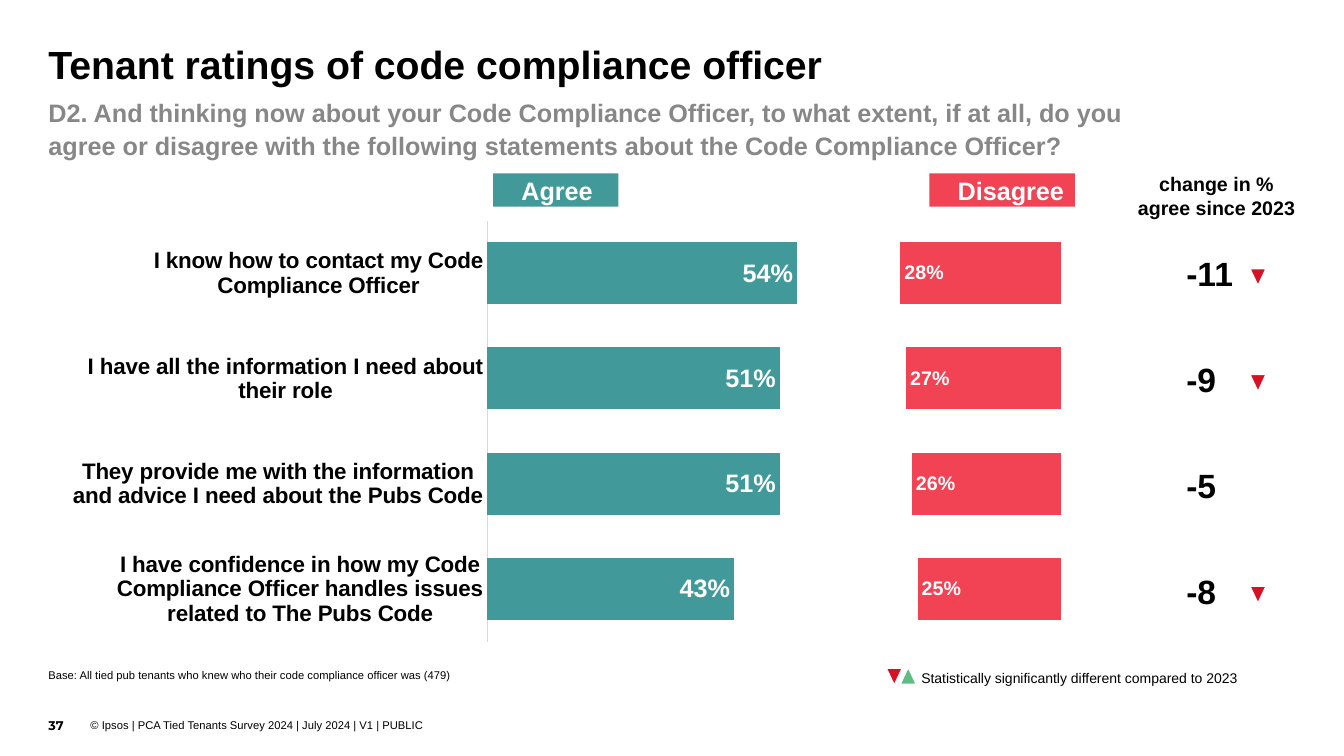
from dataclasses import dataclass

from lxml import etree
from pptx import Presentation
from pptx.chart.data import CategoryChartData
from pptx.dml.color import RGBColor as RGB
from pptx.enum.chart import XL_CHART_TYPE as CT, XL_LABEL_POSITION as LP
from pptx.enum.chart import XL_TICK_LABEL_POSITION as TLP, XL_TICK_MARK as TM
from pptx.enum.shapes import MSO_SHAPE as SHAPE
from pptx.enum.text import MSO_ANCHOR as ANCHOR, PP_ALIGN as ALIGN
from pptx.oxml.ns import qn
from pptx.util import Pt


@dataclass(frozen=True)
class Theme:
    """Colours, fonts and type sizes of the slide."""
    font: str = "Arial"
    number_font: str = "Montserrat"
    black: RGB = RGB(0, 0, 0)
    white: RGB = RGB(255, 255, 255)
    grey: RGB = RGB.from_string("878787")
    axis: RGB = RGB.from_string("D9D9D9")
    agree: RGB = RGB.from_string("419999")
    disagree: RGB = RGB.from_string("F14354")
    down: RGB = RGB.from_string("D71023")
    up: RGB = RGB.from_string("5FBD83")
    title: int = 28
    change: int = 24
    heading: int = 18
    category: int = 16
    label: int = 14
    note: int = 10
    page: int = 9
    small: int = 8


T = Theme()
STATEMENTS = [
    ("I know how to contact my Code Compliance Officer", 54, 28, "-11", True),
    ("I have all the information I need about their role", 51, 27, "-9", True),
    ("They provide me with the information and advice I need about the Pubs Code",
     51, 26, "-5", False),
    ("I have confidence in how my Code Compliance Officer handles issues "
     "related to The Pubs Code", 43, 25, "-8", True),
]


def style(font, size, color=T.black, bold=False, name=T.font):
    """Format a font."""
    font.name, font.size, font.bold = name, Pt(size), bold
    font.color.rgb = color


def write(sp, text, size, color=T.black, bold=False, name=T.font, wrap=True,
          anchor=ANCHOR.TOP, align=ALIGN.LEFT, spacing=1.0, indent=0):
    """Put one formatted paragraph into a shape."""
    tf = sp.text_frame
    tf.word_wrap, tf.vertical_anchor = wrap, anchor
    tf.margin_left = Pt(indent)
    tf.margin_top = tf.margin_right = tf.margin_bottom = 0
    p = tf.paragraphs[0]
    p.alignment, p.line_spacing = align, spacing
    r = p.add_run()
    r.text = text
    style(r.font, size, color, bold, name)


def add_text(slide, box, text, size, **options):
    """Add a text box at box (left, top, width, height)."""
    write(slide.shapes.add_textbox(*map(Pt, box)), text, size, **options)


def add_tag(slide, box, text, color):
    """Add a coloured column heading."""
    s = slide.shapes.add_shape(SHAPE.RECTANGLE, *map(Pt, box))
    s.shadow.inherit = False
    s.fill.solid()
    s.fill.fore_color.rgb = color
    s.line.fill.background()
    write(s, text, T.heading, color=T.white, bold=True, wrap=False,
          anchor=ANCHOR.MIDDLE, indent=20.2)


def add_marker(slide, left, top, rising=False):
    """Add a significance triangle pointing up or down."""
    s = slide.shapes.add_shape(SHAPE.ISOSCELES_TRIANGLE,
                               Pt(left), Pt(top), Pt(11.5), Pt(12.2))
    s.shadow.inherit = False
    s.rotation = 0 if rising else 180
    s.fill.solid()
    s.fill.fore_color.rgb = T.up if rising else T.down
    s.line.color.rgb = T.white
    s.line.width = Pt(1)


def add_header(slide, box):
    """Place the title and the survey question."""
    x, y, w, h = box
    title = slide.shapes.title
    title.left, title.top, title.width, title.height = map(Pt, box)
    write(title, "Tenant ratings of code compliance officer", T.title,
          bold=True, spacing=0.9)
    add_text(slide, (x, y + 34.6, 804, 46),
             "D2. And thinking now about your Code Compliance Officer, to what "
             "extent, if at all, do you agree or disagree with the following "
             "statements about the Code Compliance Officer?",
             T.heading, color=T.grey, bold=True, spacing=1.1)


def set_plot_layout(chart, **fractions):
    """Fix the inner plot area as fractions of the chart."""
    area = chart._chartSpace.chart.plotArea
    for old in area.findall(qn("c:layout")):
        area.remove(old)
    layout = etree.Element(qn("c:layout"))
    area.insert(0, layout)
    manual = etree.SubElement(layout, qn("c:manualLayout"))
    values = {"layoutTarget": "inner", "xMode": "edge", "yMode": "edge", **fractions}
    for tag, value in values.items():
        etree.SubElement(manual, qn(f"c:{tag}")).set("val", str(value))


def add_ratings_chart(slide, box):
    """Draw agree bars from the left and disagree bars from the right."""
    x, y, w, h = box
    names, agree, disagree, _, _ = zip(*STATEMENTS)
    spacer = [100 - a - d for a, d in zip(agree, disagree)]
    data = CategoryChartData(number_format="0\\%")
    data.categories = names
    for name, values in (("Agree", agree), ("", spacer), ("Disagree", disagree)):
        data.add_series(name, values)
    chart = slide.shapes.add_chart(CT.BAR_STACKED_100, *map(Pt, box), data).chart
    chart.has_legend = chart.has_title = False
    style(chart.font, T.note)
    set_plot_layout(chart, x=0.415, y=0.031, w=0.549, h=0.937)

    cat = chart.category_axis
    cat.reverse_order = True
    cat.has_major_gridlines = False
    cat.major_tick_mark = cat.minor_tick_mark = TM.NONE
    cat.tick_label_position = TLP.NEXT_TO_AXIS
    cat.format.line.color.rgb = T.axis
    cat.format.line.width = Pt(0.75)
    style(cat.tick_labels.font, T.category, bold=True)
    chart.value_axis.has_major_gridlines = False
    chart.value_axis.visible = False

    plot = chart.plots[0]
    plot.gap_width, plot.overlap, plot.vary_by_categories = 70, 100, False
    first, middle, last = plot.series
    middle.format.fill.background()
    for series, color, size, position in (
            (first, T.agree, T.heading, LP.INSIDE_END),
            (last, T.disagree, T.label, LP.INSIDE_BASE)):
        series.format.fill.solid()
        series.format.fill.fore_color.rgb = color
        labels = series.data_labels
        labels.show_value = True
        labels.number_format, labels.number_format_is_linked = "0\\%", False
        labels.position = position
        style(labels.font, size, T.white, bold=True)

    add_tag(slide, (x + 314, y - 23.8, 89.5, 23.8), "Agree", T.agree)
    add_tag(slide, (x + 625.6, y - 23.8, 104, 23.8), "Disagree", T.disagree)


def add_change_column(slide, box):
    """List the change per statement, marking significant ones."""
    x, y, w, h = box
    add_text(slide, (x, y, w, 34), "change in % agree since 2023", T.label,
             bold=True, align=ALIGN.CENTER)
    step = (h - 34) / len(STATEMENTS)
    for i, (*_, change, significant) in enumerate(STATEMENTS):
        top = y + 57.6 + i * step
        add_text(slide, (x + 36, top, 34, 29), change, T.change,
                 bold=True, wrap=False)
        if significant:
            add_marker(slide, x + 81.4, top + 11.2)


def add_footer(slide, box):
    """Place the base note, significance key, page number and copyright line."""
    x, y, w, h = box
    add_text(slide, (x, y, 560, 31),
             "Base: All tied pub tenants who knew who their code compliance "
             "officer was (479)", T.small, spacing=1.1)
    add_marker(slide, x + 598.4, y + 0.6)
    add_marker(slide, x + 608.4, y, rising=True)
    add_text(slide, (x + 623.5, y + 0.6, 271, 12.2),
             "Statistically significantly different compared to 2023",
             T.note, spacing=1.1)
    add_text(slide, (x, y + h - 29, 24, 29), "37", T.page, bold=True,
             name=T.number_font, wrap=False, anchor=ANCHOR.BOTTOM)
    add_text(slide, (x + 30, y + h - 10.2, 243, 9.4),
             "© Ipsos | PCA Tied Tenants Survey 2024 | July 2024 | V1 | PUBLIC",
             T.small, wrap=False, anchor=ANCHOR.MIDDLE)


def main():
    """Build and save the slide."""
    prs = Presentation()
    prs.slide_width, prs.slide_height = Pt(960), Pt(540)
    slide = prs.slides.add_slide(prs.slide_layouts[5])
    add_header(slide, (34.6, 32.4, 925.4, 87.8))
    add_ratings_chart(slide, (38.2, 147.6, 746.6, 321.1))
    add_change_column(slide, (811.4, 123.1, 115.2, 336.4))
    add_footer(slide, (34.6, 476.6, 890, 46.8))
    prs.save("out.pptx")


if __name__ == "__main__":
    main()
